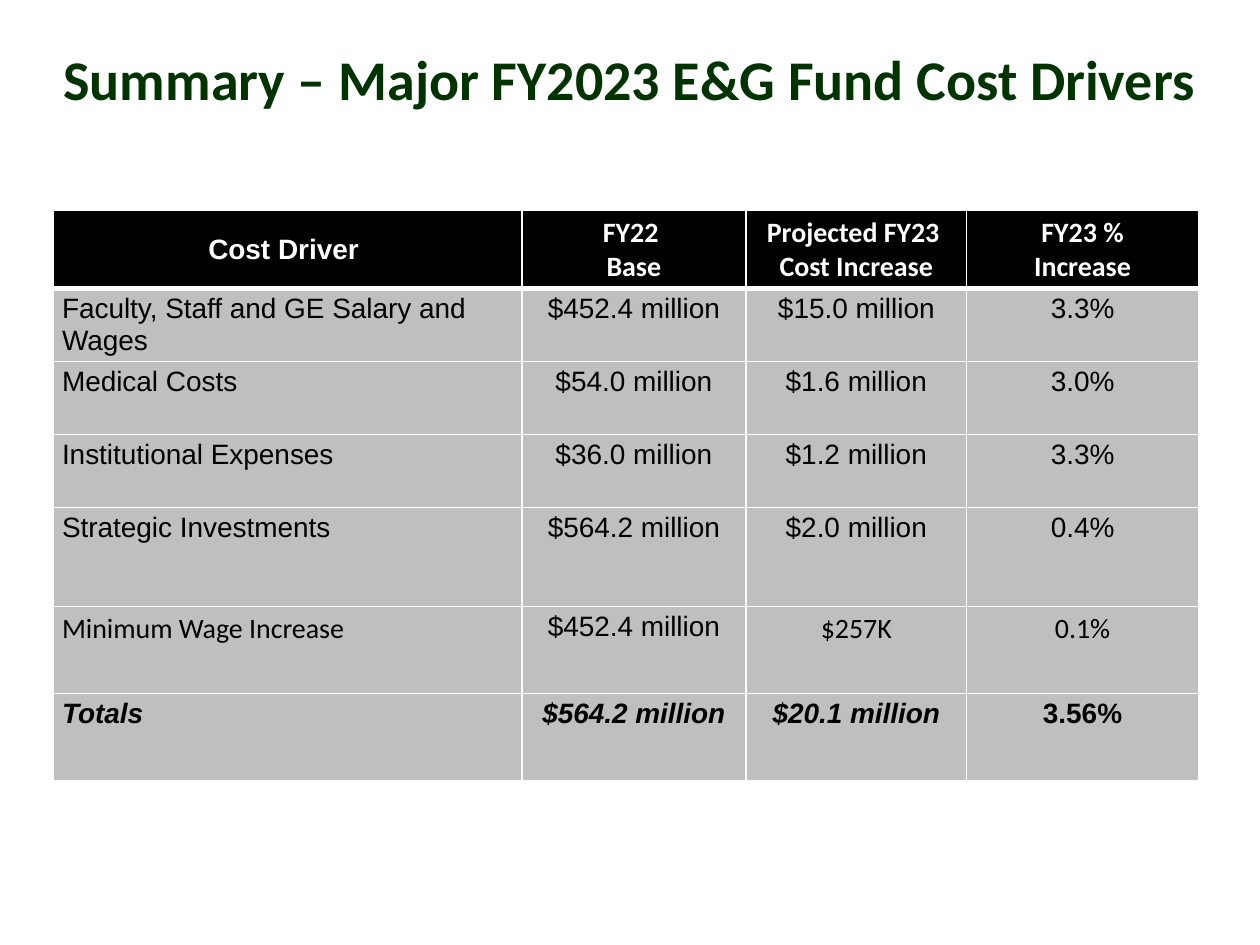
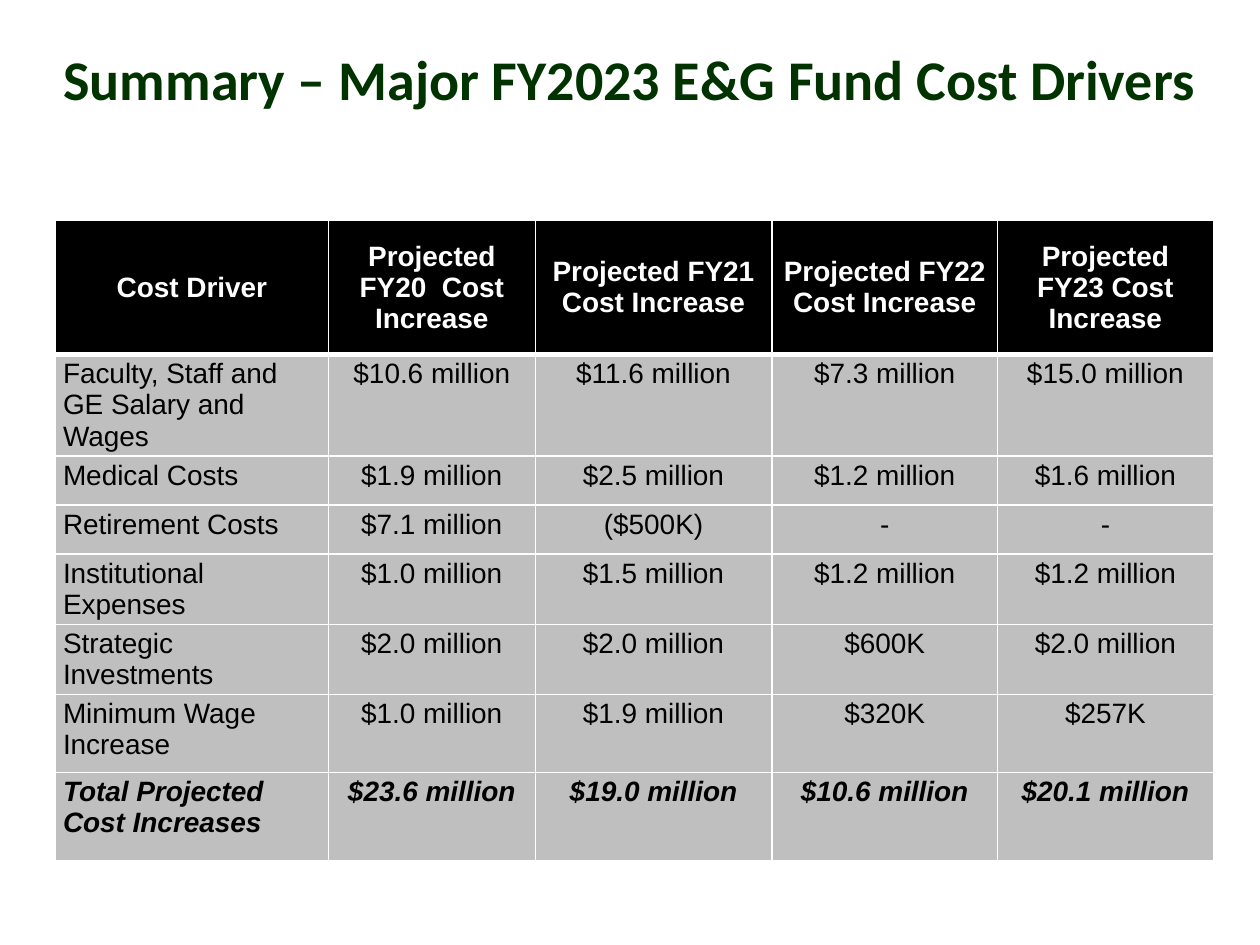
"""Build two slides with tables of the FY2023 E&G Fund cost drivers."""
import pptx
import pptx.dml.color
import pptx.enum.text
import pptx.oxml
import pptx.oxml.ns
import pptx.util

Cm = pptx.util.Cm
Pt = pptx.util.Pt
RGBColor = pptx.dml.color.RGBColor
ALIGN = pptx.enum.text.PP_ALIGN
ANCHOR = pptx.enum.text.MSO_ANCHOR

GREEN = RGBColor(0x00, 0x33, 0x00)
BLACK = RGBColor(0x00, 0x00, 0x00)
WHITE = RGBColor(0xFF, 0xFF, 0xFF)
GREY = RGBColor(0xBF, 0xBF, 0xBF)

TITLE = "Summary – Major FY2023 E&G Fund Cost Drivers"
TITLE_FONT = {"name": "Calibri", "size": Pt(32), "bold": True}
BODY_FONT = {"name": "Arial", "size": Pt(16), "bold": False, "italic": False}
HEAD_FONT = {**BODY_FONT, "bold": True}
TOTAL_FONT = {**HEAD_FONT, "italic": True}
CALIBRI = {"name": "Calibri"}

DRIVERS = [
    ["Cost Driver ", "FY22 \vBase", "Projected FY23  Cost Increase", "FY23 %\nIncrease"],
    ["Faculty, Staff and GE Salary and Wages", "$452.4 million", "$15.0 million", "3.3%"],
    ["Medical Costs", "$54.0 million", "$1.6 million", "3.0%"],
    ["Institutional Expenses", "$36.0 million", "$1.2 million", "3.3%"],
    ["Strategic Investments", "$564.2 million", "$2.0 million", "0.4%"],
    ["Minimum Wage Increase", "$452.4 million", "$257K", "0.1%"],
    ["Totals", "$564.2 million", "$20.1 million", "3.56%"],
]
DRIVER_FONTS = {
    **{(0, c): CALIBRI for c in (1, 2, 3)},
    **{(5, c): CALIBRI for c in (0, 2, 3)},
    (6, 3): {"italic": False},
}

HISTORY = [
    ["Cost Driver", "Projected FY20  Cost Increase", "Projected FY21 Cost Increase",
     "Projected FY22 Cost Increase", "Projected FY23 Cost Increase"],
    ["Faculty, Staff and GE Salary and Wages",
     "$10.6 million", "$11.6 million", "$7.3 million", "$15.0 million"],
    ["Medical Costs", "$1.9 million", "$2.5 million", "$1.2 million", "$1.6 million"],
    ["Retirement Costs", "$7.1 million", "($500K)", "-", "-"],
    ["Institutional Expenses", "$1.0 million", "$1.5 million", "$1.2 million", "$1.2 million"],
    ["Strategic Investments", "$2.0 million", "$2.0 million", "$600K", "$2.0 million"],
    ["Minimum Wage Increase", "$1.0 million", "$1.9 million", "$320K", "$257K"],
    ["Total Projected Cost Increases",
     "$23.6 million", "$19.0 million", "$10.6 million", "$20.1 million"],
]


def set_attrs(obj, values):
    """Set each named attribute of an object."""
    for name, value in values.items():
        setattr(obj, name, value)


def format_text(tf, font, color, align):
    """Give all paragraphs of a text frame one font, colour and alignment."""
    for p in tf.paragraphs:
        p.alignment = align
        for r in p.runs:
            set_attrs(r.font, font)
            r.font.color.rgb = color


def add_border(cell, side, width):
    """Draw one white edge of a table cell."""
    cell._tc.get_or_add_tcPr().append(pptx.oxml.parse_xml(
        f'<a:ln{side} {pptx.oxml.ns.nsdecls("a")} w="{Pt(width)}">'
        f'<a:solidFill><a:srgbClr val="{WHITE}"/></a:solidFill></a:ln{side}>'))


def add_title_slide(prs):
    """Add a slide with the shared title."""
    s = prs.slides.add_slide(prs.slide_layouts[5])
    sp = s.shapes.title
    set_attrs(sp, {"left": Cm(0), "top": Cm(0.43), "width": prs.slide_width, "height": Cm(2.31)})
    tf = sp.text_frame
    tf.text = TITLE
    set_attrs(tf, {"word_wrap": True, "vertical_anchor": ANCHOR.MIDDLE,
                   "auto_size": pptx.enum.text.MSO_AUTO_SIZE.NONE})
    format_text(tf, TITLE_FONT, GREEN, ALIGN.CENTER)
    return s


def fill_cell(cell, text, row, col, font, margins):
    """Write and format one cell of a cost table."""
    head = row == 0
    set_attrs(cell, margins)
    cell.vertical_anchor = ANCHOR.MIDDLE if head else ANCHOR.TOP
    for side, width in {"L": 1, "R": 1, "T": 3 if row == 1 else 1, "B": 3 if head else 1}.items():
        add_border(cell, side, width)
    cell.fill.solid()
    cell.fill.fore_color.rgb = BLACK if head else GREY
    cell.text_frame.text = text
    align = ALIGN.CENTER if head or col else ALIGN.LEFT
    format_text(cell.text_frame, font, WHITE if head else BLACK, align)


def add_cost_table(s, rows, left, top, widths, heights, margin_x, margin_y, overrides):
    """Add a table with a header row, driver rows and a totals row."""
    table = s.shapes.add_table(len(rows), len(widths), Cm(left), Cm(top),
                               Cm(sum(widths)), Cm(sum(heights))).table
    table.horz_banding = False
    for column, width in zip(table.columns, widths):
        column.width = Cm(width)
    for row, height in zip(table.rows, heights):
        row.height = Cm(height)
    margins = {"margin_left": Cm(margin_x), "margin_right": Cm(margin_x),
               "margin_top": Cm(margin_y), "margin_bottom": Cm(margin_y)}
    row_fonts = [HEAD_FONT] + [BODY_FONT] * (len(rows) - 2) + [TOTAL_FONT]
    for i, (texts, row_font) in enumerate(zip(rows, row_fonts)):
        for j, text in enumerate(texts):
            font = {**row_font, **overrides.get((i, j), {})}
            fill_cell(table.cell(i, j), text, i, j, font, margins)


def main():
    """Build and save the presentation."""
    prs = pptx.Presentation()
    set_attrs(prs, {"slide_width": Cm(25.4), "slide_height": Cm(19.05)})
    add_cost_table(add_title_slide(prs), DRIVERS, 1.07, 4.24,
                   [9.45, 4.52, 4.45, 4.67], [1.5] + [1.47] * 3 + [2, 1.75, 1.75],
                   0.18, 0.1, DRIVER_FONTS)
    add_cost_table(add_title_slide(prs), HISTORY, 1.12, 4.45,
                   [5.5, 4.17, 4.77, 4.55, 4.35],
                   [2.7, 2.02, 0.99, 0.99, 1.4, 1.4, 1.57, 1.78],
                   0.15, 0.08, {})
    prs.save("out.pptx")


if __name__ == "__main__":
    main()
